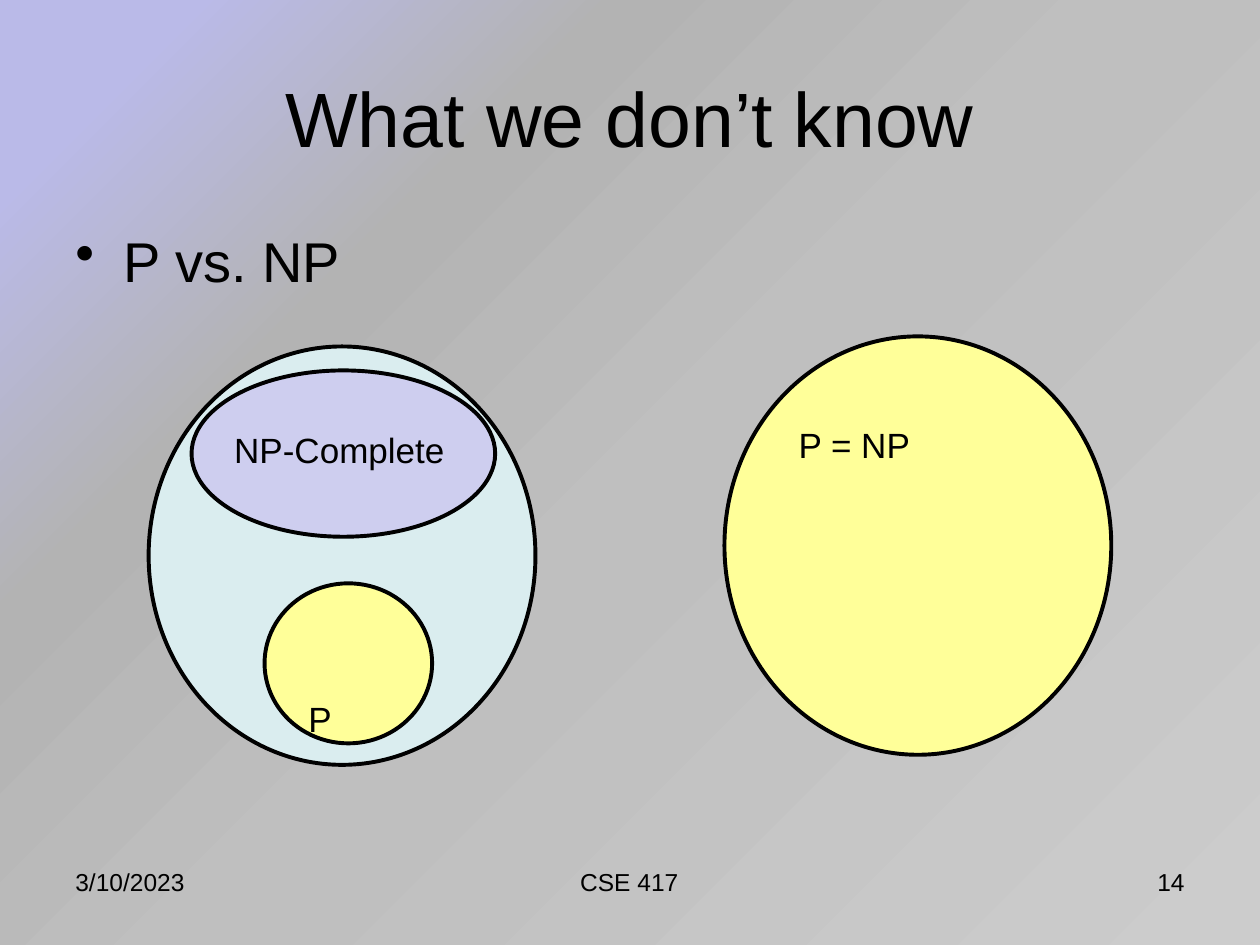
from dataclasses import dataclass

from pptx import Presentation
from pptx.dml.color import RGBColor as RGB
from pptx.enum.shapes import MSO_SHAPE as Kind
from pptx.enum.text import MSO_ANCHOR as Anchor, MSO_AUTO_SIZE as Fit, PP_ALIGN as Align
from pptx.oxml import parse_xml
from pptx.oxml.ns import nsdecls
from pptx.util import Emu, Pt

PX = 9144  # 100 px to the inch


@dataclass(frozen=True)
class Theme:
    font: str = "Arial"
    ink: str = "000000"
    aqua: str = "DAEDEF"
    lilac: str = "CECEEF"
    lemon: str = "FFFF99"
    back: tuple = ((0, "CCCCCC"), (48, "BFBFBF"), (72, "B3B3B3"), (91, "BABAE8"))
    head: int = 44
    body: int = 32
    label: int = 20
    foot: int = 14
    line: float = 2.25


T = Theme()


def px(*nums):
    return [Emu(n * PX) for n in nums]


def style(para, size, align=Align.LEFT):
    para.alignment = align
    font = para.font
    font.name, font.size = T.font, Pt(size)
    font.color.rgb = RGB.from_string(T.ink)


def lead(para, pct):
    """Set the space before a paragraph as a percentage of its line."""
    para._p.get_or_add_pPr().append(parse_xml(
        f'<a:spcBef {nsdecls("a")}><a:spcPct val="{pct * 1000}"/></a:spcBef>'))


def text(slide, box, words, size, align=Align.LEFT):
    frame = slide.shapes.add_textbox(*px(*box)).text_frame
    frame.word_wrap = True
    para = frame.paragraphs[0]
    para.text = words
    style(para, size, align)
    return frame


def label(slide, box, words):
    frame = text(slide, box, words, T.label)
    frame.auto_size = Fit.SHAPE_TO_FIT_TEXT
    lead(frame.paragraphs[0], 50)


def oval(slide, box, fill):
    shape = slide.shapes.add_shape(Kind.OVAL, *px(*box))
    shape.shadow.inherit = False
    shape.fill.solid()
    shape.fill.fore_color.rgb = RGB.from_string(fill)
    shape.line.color.rgb = RGB.from_string(T.ink)
    shape.line.width = Pt(T.line)


def paint(slide):
    """Fill the background with a gradient centred on the bottom right corner."""
    stops = "".join(f'<a:gs pos="{pos * 1000}"><a:srgbClr val="{color}"/></a:gs>'
                    for pos, color in T.back)
    slide.element.cSld.insert(0, parse_xml(
        f'<p:bg {nsdecls("p", "a")}><p:bgPr><a:gradFill rotWithShape="0">'
        f'<a:gsLst>{stops}</a:gsLst><a:path path="circle">'
        '<a:fillToRect l="100000" t="100000"/></a:path></a:gradFill>'
        '<a:effectLst/></p:bgPr></p:bg>'))


def title(slide, box, words):
    shape = slide.shapes.title
    shape.left, shape.top, shape.width, shape.height = px(*box)
    frame = shape.text_frame
    frame.text = words
    frame.auto_size = Fit.NONE
    frame.vertical_anchor = Anchor.MIDDLE
    style(frame.paragraphs[0], T.head, Align.CENTER)


def bullet(slide, box, words):
    para = text(slide, box, words, T.body).paragraphs[0]
    lead(para, 20)
    props = para._p.get_or_add_pPr()
    props.set("marL", str(38 * PX))
    props.set("indent", str(-38 * PX))
    props.append(parse_xml(f'<a:buChar {nsdecls("a")} char="•"/>'))


def split(slide, box):
    """Draw NP with P and NP-Complete as separate parts of it."""
    x, y, w, h = box
    oval(slide, box, T.aqua)
    oval(slide, (x + 92, y + 188, 133, 127), T.lemon)
    oval(slide, (x + 34, y + 19, 241, 132), T.lilac)
    label(slide, (x + 58, y + 60, 191, 43), "NP-Complete")
    label(slide, (x + 117, y + 274, 83, 43), "P")


def same(slide, box):
    """Draw P and NP as one set."""
    x, y, w, h = box
    oval(slide, box, T.lemon)
    label(slide, (x + 49, y + 64, 133, 44), "P = NP")


def footer(slide, box):
    x, y, w, h = box
    side, mid = 233, 317
    text(slide, (x, y, side, h), "3/10/2023", T.foot)
    text(slide, (x + (w - mid) // 2, y, mid, h), "CSE 417", T.foot, Align.CENTER)
    text(slide, (x + w - side, y, side, h), "14", T.foot, Align.RIGHT)


def main():
    deck = Presentation()
    deck.slide_width, deck.slide_height = px(1000, 750)
    slide = deck.slides.add_slide(deck.slide_layouts[5])
    paint(slide)
    title(slide, (50, 30, 900, 125), "What we don’t know")
    bullet(slide, (50, 175, 900, 134), "P vs. NP")
    split(slide, (118, 275, 307, 332))
    same(slide, (575, 267, 307, 332))
    footer(slide, (50, 683, 900, 52))
    deck.save("out.pptx")


if __name__ == "__main__":
    main()
